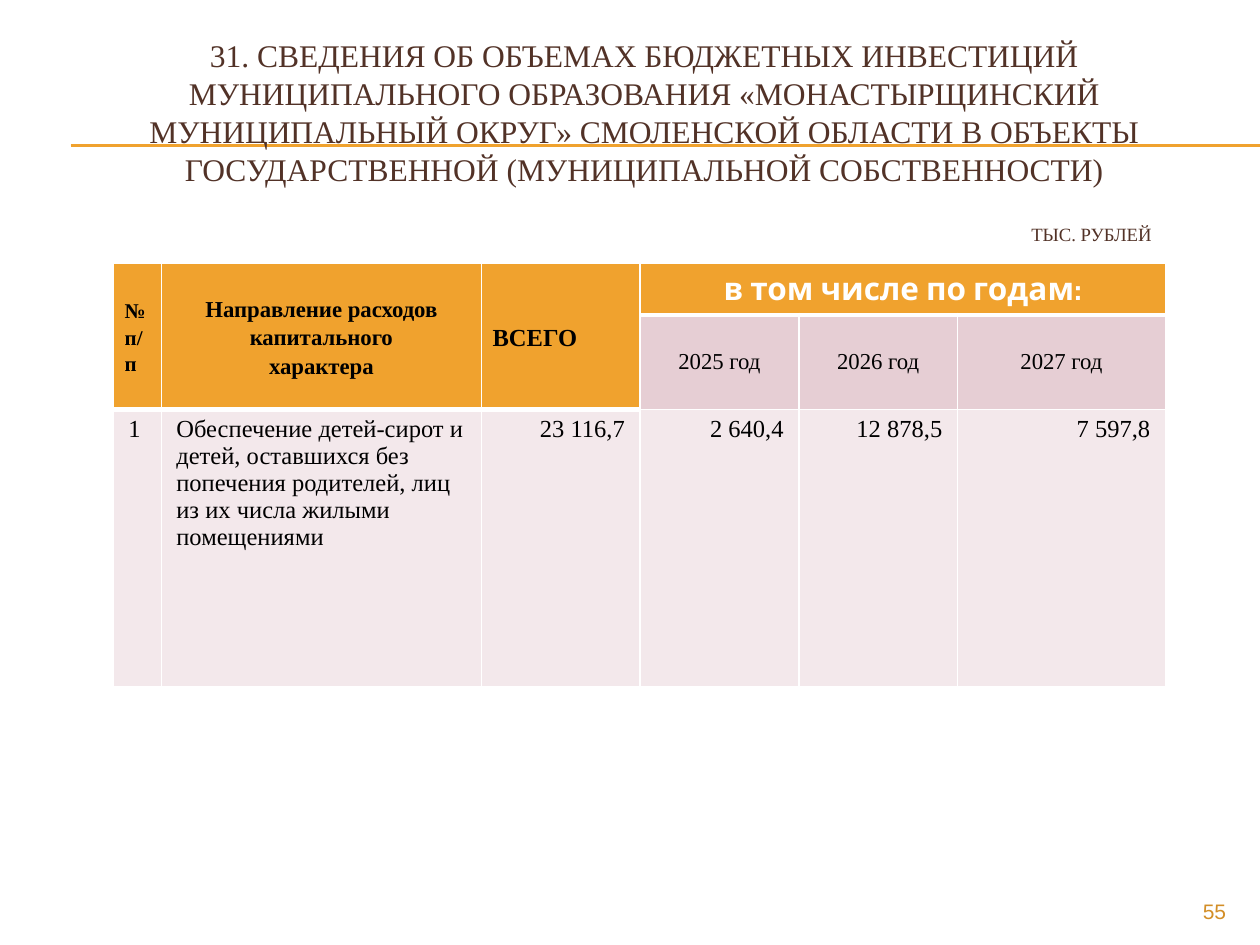
from lxml.etree import SubElement
from pptx import Presentation
from pptx.dml.color import RGBColor
from pptx.enum.shapes import MSO_CONNECTOR
from pptx.enum.text import MSO_ANCHOR, PP_ALIGN
from pptx.oxml.ns import qn
from pptx.util import Inches, Pt

ORANGE, BROWN, PAGE_GOLD = "F0A22E", "523227", "D38E27"
YEAR_FILL, BODY_FILL, WHITE, BLACK = "E6CED4", "F3E8EB", "FFFFFF", "000000"
SERIF = "Times New Roman"
LEFT, CENTER, RIGHT = PP_ALIGN.LEFT, PP_ALIGN.CENTER, PP_ALIGN.RIGHT
TOP, MIDDLE = MSO_ANCHOR.TOP, MSO_ANCHOR.MIDDLE
TIGHT, ROOMY = (0.09, 0), (0.12, 0.05)

COLUMNS = [0.38, 2.54, 1.26, 1.26, 1.26, 1.65]
ROWS = [0.41, 0.41, 2.2]
HEADINGS = [
    ("№ п/п", 12, LEFT),
    ("Направление расходов\vкапитального\nхарактера", 13, CENTER),
    ("ВСЕГО", 14, LEFT),
]
YEARS = ["2025 год", "2026 год", "2027 год"]
EXPENSES = [
    "1",
    "Обеспечение детей-сирот и детей, оставшихся без попечения родителей, "
    "лиц из их числа жилыми помещениями",
    "23 116,7", "2 640,4", "12 878,5", "7 597,8",
]


def color(value):
    return RGBColor.from_string(value)


def write_text(frame, text, size, text_color, align, font=SERIF, bold=False, spacing=1.0):
    frame.word_wrap = True
    frame.text = text
    formats = {"name": font, "size": Pt(size), "bold": bold}
    for paragraph in frame.paragraphs:
        paragraph.alignment = align
        paragraph.line_spacing = spacing
        for run in paragraph.runs:
            for name, value in formats.items():
                setattr(run.font, name, value)
            run.font.color.rgb = color(text_color)


def add_text(slide, box, text, size, text_color, align, anchor=MIDDLE, font=SERIF):
    frame = slide.shapes.add_textbox(*map(Inches, box)).text_frame
    frame.vertical_anchor = anchor
    write_text(frame, text, size, text_color, align, font)


def add_rule(slide, left, top, right):
    connector = slide.shapes.add_connector(
        MSO_CONNECTOR.STRAIGHT, Inches(left), Inches(top), Inches(right), Inches(top))
    connector.line.color.rgb = color(ORANGE)
    connector.line.width = Pt(0.75)
    SubElement(connector._element.spPr, qn("a:effectLst"))


def style_cell(cell, fill, anchor, margins, top=1, bottom=1):
    """Set fill, anchor, margins in inches and white borders in points."""
    horizontal, vertical = map(Inches, margins)
    formats = {
        "vertical_anchor": anchor,
        "margin_left": horizontal, "margin_right": horizontal,
        "margin_top": vertical, "margin_bottom": vertical,
    }
    for name, value in formats.items():
        setattr(cell, name, value)
    properties = cell._tc.get_or_add_tcPr()
    for side, width in {"L": 1, "R": 1, "T": top, "B": bottom}.items():
        border = SubElement(properties, qn(f"a:ln{side}"), w=str(Pt(width)))
        SubElement(SubElement(border, qn("a:solidFill")), qn("a:srgbClr"), val=WHITE)
    cell.fill.solid()
    cell.fill.fore_color.rgb = color(fill)


def fill_header(table):
    for column, (text, size, align) in enumerate(HEADINGS):
        for row in (0, 1):
            style_cell(table.cell(row, column), ORANGE, MIDDLE, TIGHT, bottom=3)
        cell = table.cell(0, column)
        cell.merge(table.cell(1, column))
        write_text(cell.text_frame, text, size, BLACK, align, bold=True, spacing=1.15)

    first_year = len(HEADINGS)
    for column, year in enumerate(YEARS, first_year):
        style_cell(table.cell(0, column), ORANGE, TOP, ROOMY, bottom=3)
        cell = table.cell(1, column)
        style_cell(cell, YEAR_FILL, MIDDLE, TIGHT, top=3)
        write_text(cell.text_frame, year, 13, BLACK, CENTER)
    years_heading = table.cell(0, first_year)
    years_heading.merge(table.cell(0, len(COLUMNS) - 1))
    write_text(years_heading.text_frame, "в том числе по годам:", 18, WHITE, CENTER,
               font="Cabin", bold=True)


def fill_expenses(table):
    for column, text in enumerate(EXPENSES):
        cell = table.cell(2, column)
        style_cell(cell, BODY_FILL, TOP, ROOMY, top=3 if column < len(HEADINGS) else 1)
        write_text(cell.text_frame, text, 14, BLACK, LEFT if column < 2 else RIGHT)


def add_investment_table(slide, box):
    table = slide.shapes.add_table(len(ROWS), len(COLUMNS), *map(Inches, box)).table
    for column, width in zip(table.columns, COLUMNS):
        column.width = Inches(width)
    for row, height in zip(table.rows, ROWS):
        row.height = Inches(height)
    fill_header(table)
    fill_expenses(table)


def main():
    presentation = Presentation()
    presentation.slide_width, presentation.slide_height = Inches(10), Inches(7.5)
    slide = presentation.slides.add_slide(presentation.slide_layouts[6])
    for top in (1.15, 1.16):
        add_rule(slide, 0.56, top, 10)
    add_text(slide, (0.7, 0.21, 8.83, 1.36),
             "31. СВЕДЕНИЯ ОБ ОБЪЕМАХ БЮДЖЕТНЫХ ИНВЕСТИЦИЙ МУНИЦИПАЛЬНОГО ОБРАЗОВАНИЯ "
             "«МОНАСТЫРЩИНСКИЙ МУНИЦИПАЛЬНЫЙ ОКРУГ» СМОЛЕНСКОЙ ОБЛАСТИ В ОБЪЕКТЫ "
             "ГОСУДАРСТВЕННОЙ (МУНИЦИПАЛЬНОЙ СОБСТВЕННОСТИ)", 18, BROWN, CENTER)
    add_investment_table(slide, (0.9, 2.09, sum(COLUMNS), sum(ROWS)))
    add_text(slide, (9, 7.08, 0.83, 0.27), "55", 12, PAGE_GOLD, RIGHT, TOP, "Arial")
    add_text(slide, (0.41, 1.62, 8.83, 0.47), "ТЫС. РУБЛЕЙ", 10.7, BROWN, RIGHT)
    presentation.save("out.pptx")


if __name__ == "__main__":
    main()
